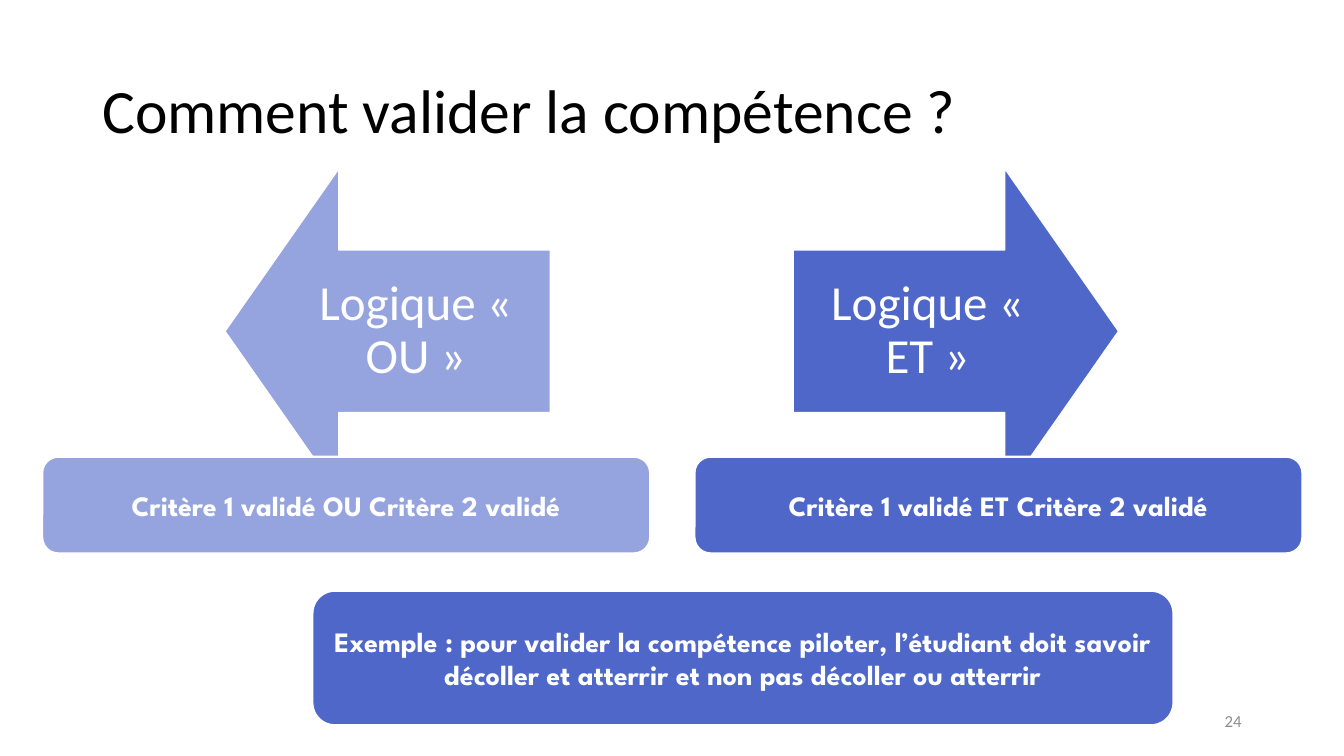
from pptx import Presentation
from pptx.dml.color import RGBColor
from pptx.enum.shapes import MSO_SHAPE as Kind
from pptx.enum.text import MSO_ANCHOR as Anchor, PP_ALIGN as Align
from pptx.util import Pt

LIGHT, DARK, WHITE = "95A4DE", "4E67C8", "FFFFFF"


def tint(hue):
    return RGBColor.from_string(hue)


def write(box, text, hue, font, para=None, inset=None):
    frame = box.text_frame
    frame.word_wrap = True
    frame.vertical_anchor = Anchor.MIDDLE
    if inset:
        for side in ("left", "top", "right", "bottom"):
            setattr(frame, "margin_" + side, Pt(inset))
    line = frame.paragraphs[0]
    for key, val in (para or {}).items():
        setattr(line, key, val)
    run = line.add_run()
    run.text = text
    for key, val in font.items():
        setattr(run.font, key, val)
    run.font.color.rgb = tint(hue)


deck = Presentation()
deck.slide_width, deck.slide_height = Pt(960), Pt(540)
slide = deck.slides.add_slide(deck.slide_layouts[6])
shapes = slide.shapes

title = shapes.add_textbox(Pt(66), Pt(28.8), Pt(828), Pt(104.4))
write(title, "Comment valider la compétence ?", "000000",
      {"name": "Calibri", "size": Pt(44)}, {"line_spacing": 0.9})

page = shapes.add_textbox(Pt(678), Pt(500.4), Pt(216), Pt(28.8))
write(page, "24", "8C8C8C", {"name": "Calibri", "size": Pt(12)},
      {"alignment": Align.RIGHT})

logic = [
    (160.7, 201, 270, LIGHT, "Logique « OU »"),
    (566.6, 566.6, 90, DARK, "Logique « ET »"),
]
for left, start, turn, hue, text in logic:
    arrow = shapes.add_shape(Kind.UP_ARROW, Pt(left), Pt(120.4), Pt(232.4), Pt(232.4))
    arrow.rotation = turn
    arrow.adjustments[0], arrow.adjustments[1] = 0.5, 0.35
    arrow.shadow.inherit = False
    arrow.fill.solid()
    arrow.fill.fore_color.rgb = tint(hue)
    arrow.line.color.rgb = tint(WHITE)
    arrow.line.width = Pt(1)
    label = shapes.add_textbox(Pt(start), Pt(178.5), Pt(192), Pt(116.4))
    write(label, text, WHITE, {"name": "Calibri", "size": Pt(35)},
          {"alignment": Align.CENTER, "line_spacing": 0.9}, 19.4)

rules = [
    (30.2, 326.3, 434.2, 69, LIGHT, "Critère 1 validé OU Critère 2 validé"),
    (496.1, 326.3, 434.2, 69, DARK, "Critère 1 validé ET Critère 2 validé"),
    (223.2, 422, 615, 96, DARK,
     "Exemple : pour valider la compétence piloter, l’étudiant doit savoir "
     "décoller et atterrir et non pas décoller ou atterrir"),
]
for left, top, width, height, hue, text in rules:
    card = shapes.add_shape(Kind.ROUNDED_RECTANGLE, Pt(left), Pt(top), Pt(width), Pt(height))
    card.shadow.inherit = False
    card.fill.solid()
    card.fill.fore_color.rgb = tint(hue)
    card.line.color.rgb = tint(WHITE)
    card.line.width = Pt(1.5)
    write(card, text, WHITE, {"name": "League Spartan", "size": Pt(20), "bold": True},
          {"alignment": Align.CENTER})

deck.save("out.pptx")
